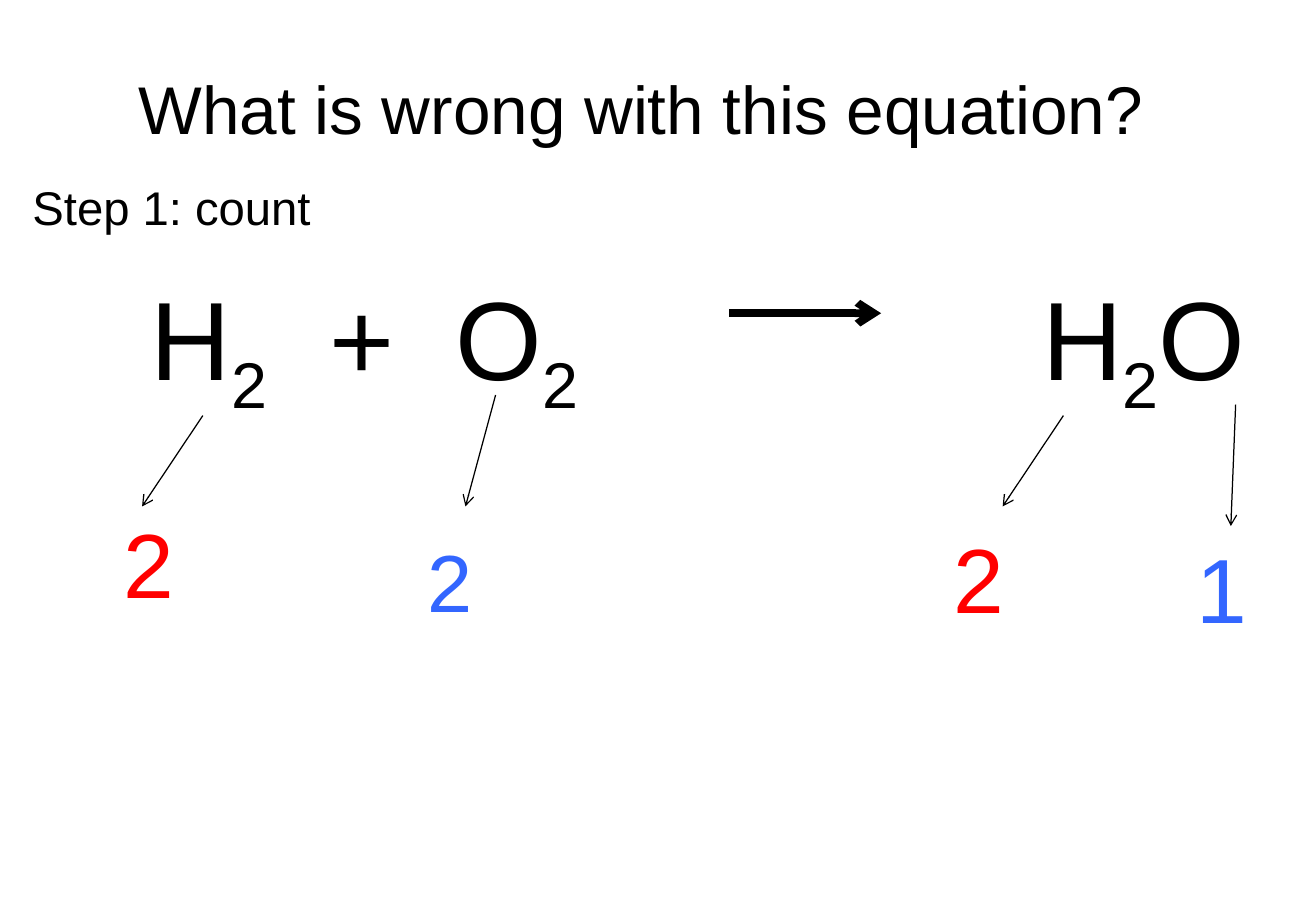
from pptx import Presentation
from pptx.dml.color import RGBColor
from pptx.enum.shapes import MSO_CONNECTOR
from pptx.enum.text import MSO_ANCHOR, MSO_AUTO_SIZE, PP_ALIGN
from pptx.oxml.ns import qn
from pptx.util import Cm, Pt
from lxml import etree

LINE = MSO_CONNECTOR.STRAIGHT
TOP = MSO_ANCHOR.TOP
FIXED = MSO_AUTO_SIZE.NONE
LEFT = PP_ALIGN.LEFT
FONT = "Arial"
HUES = {"ink": "000000", "red": "FF0000", "blue": "3366FF"}


def style(run, size, hue="ink"):
    """Give a run its font, size and colour."""
    run.font.name = FONT
    run.font.size = Pt(size)
    run.font.color.rgb = RGBColor.from_string(HUES[hue])


def frame(shape, wrap):
    """Set up a text frame that starts at its top left."""
    text = shape.text_frame
    text.word_wrap = wrap
    text.auto_size = FIXED
    text.vertical_anchor = TOP
    return text


def label(slide, box, words, size, hue="ink"):
    """Add a one-line text box."""
    shape = slide.shapes.add_textbox(*map(Cm, box))
    text = frame(shape, True)
    text.text = words
    style(text.paragraphs[0].runs[0], size, hue)


def arrow(slide, start, end, width):
    """Draw a line with an open arrowhead at its end."""
    line = slide.shapes.add_connector(LINE, *map(Cm, (*start, *end)))
    line.line.color.rgb = RGBColor.from_string(HUES["ink"])
    line.line.width = Pt(width)
    props = line._element.spPr
    etree.SubElement(props.find(qn("a:ln")), qn("a:tailEnd"), type="arrow")
    etree.SubElement(props, qn("a:effectLst"))


def heading(slide, box):
    """Fill the title placeholder."""
    title = slide.shapes.title
    title.left, title.top, title.width, title.height = map(Cm, box)
    text = frame(title, False)
    text.text = "What is wrong with this equation?"
    para = text.paragraphs[0]
    para.alignment = LEFT
    style(para.runs[0], 40)


def formula(slide, box):
    """Write the equation on tab stops, with its reaction arrow."""
    left, top = box[:2]
    shape = slide.shapes.add_textbox(*map(Cm, box))
    para = frame(shape, True).paragraphs[0]
    tabs = etree.SubElement(para._p.get_or_add_pPr(), qn("a:tabLst"))
    for stop in (3.73, 6.38, 18.64):
        etree.SubElement(tabs, qn("a:tab"), pos=str(Cm(stop)), algn="l")
    for part in ("H", "2", "\t+\tO", "2", "\tH", "2", "O"):
        run = para.add_run()
        run.text = part
        style(run, 66)
        if part == "2":
            run._r.get_or_add_rPr().set("baseline", "-25000")
    arrow(slide, (left + 12.34, top + 1.04), (left + 15.52, top + 1.04), 4.5)


def counts(slide, box):
    """Point from each element down to its number of atoms."""
    left, top = box[:2]
    atoms = (
        ((1.9, 0.43), (0.63, 2.33), (0, 2.23), "2", 54, "red"),
        ((8.02, 0), (7.39, 2.33), (6.35, 2.74), "2", 48, "blue"),
        ((19.89, 0.43), (18.62, 2.33), (17.35, 2.54), "2", 54, "red"),
        ((23.49, 0.2), (23.39, 2.74), (22.43, 2.74), "1", 54, "blue"),
    )
    for start, end, spot, count, size, hue in atoms:
        start, end, spot = ((left + x, top + y) for x, y in (start, end, spot))
        arrow(slide, start, end, 0.75)
        label(slide, (*spot, 1.6, 2.57), count, size, hue)


def main():
    """Build the slide and save it."""
    deck = Presentation()
    deck.slide_width, deck.slide_height = Cm(27.51), Cm(19.05)
    slide = deck.slides.add_slide(deck.slide_layouts[5])
    heading(slide, (2.64, 1.27, 21.74, 1.96))
    label(slide, (0.43, 3.61, 6.6, 1.45), "Step 1: count", 28)
    formula(slide, (2.9, 5.51, 23.95, 3.07))
    counts(slide, (2.34, 8.26, 24.03, 5.31))
    deck.save("out.pptx")


if __name__ == "__main__":
    main()
